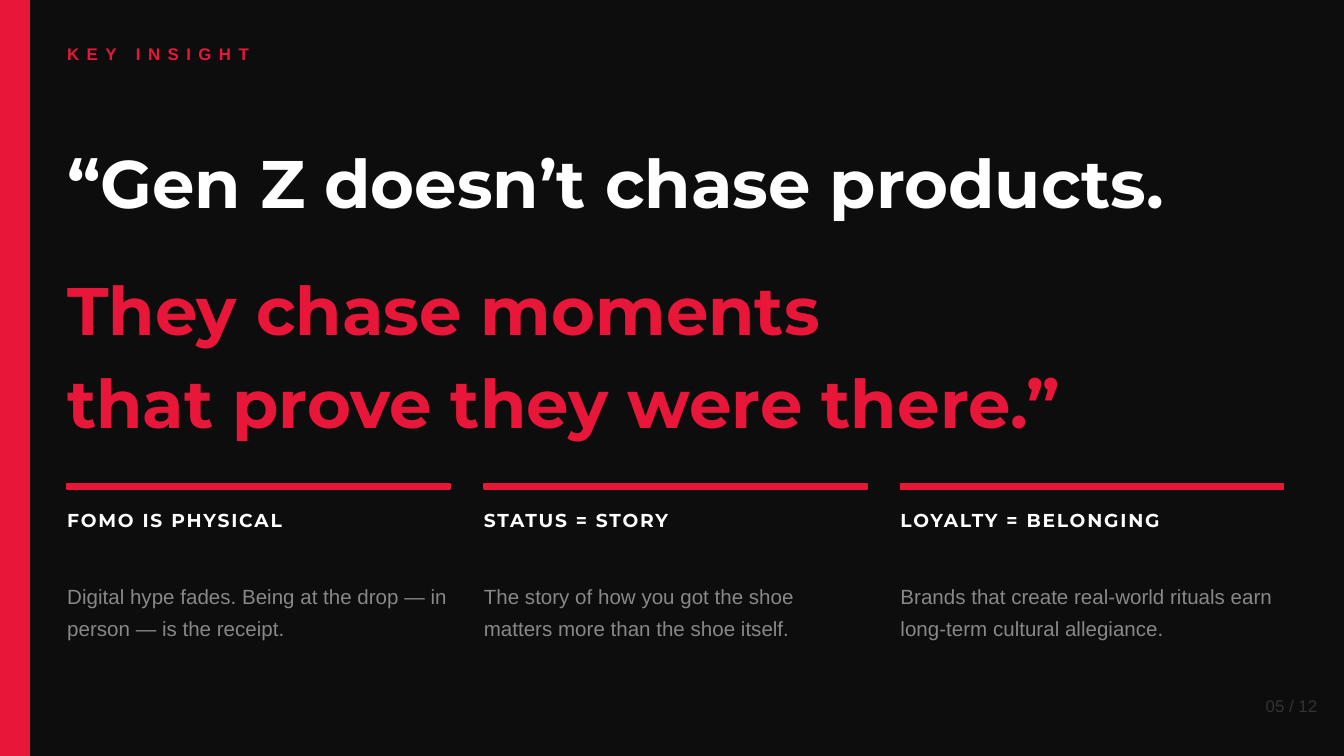
from pptx import Presentation
from pptx.dml.color import RGBColor
from pptx.enum import shapes, text
from pptx.util import Pt

COLORS = {"background": "0D0D0D", "accent": "E8173A", "white": "FFFFFF",
          "body": "888888", "page": "333333"}


def add_bar(slide, left, top, width, height):
    shape = slide.shapes.add_shape(shapes.MSO_SHAPE.RECTANGLE,
                                   Pt(left), Pt(top), Pt(width), Pt(height))
    shape.shadow.inherit = False
    shape.fill.solid()
    shape.fill.fore_color.rgb = RGBColor.from_string(COLORS["accent"])
    shape.line.color.rgb = RGBColor.from_string(COLORS["accent"])
    shape.line.width = Pt(1)


def add_text(slide, left, top, width, height, content, size, font, color,
             bold=False, tracking=0, line_spacing=None, align=None):
    box = slide.shapes.add_textbox(Pt(left), Pt(top), Pt(width), Pt(height))
    frame = box.text_frame
    frame.word_wrap = True
    frame.vertical_anchor = text.MSO_ANCHOR.MIDDLE
    frame.margin_left = frame.margin_top = frame.margin_right = frame.margin_bottom = 0
    frame.text = content
    for paragraph in frame.paragraphs:
        paragraph.alignment = align
        paragraph.line_spacing = line_spacing
        for run in paragraph.runs:
            run.font.size = Pt(size)
            run.font.name = font
            run.font.bold = bold
            run.font.color.rgb = RGBColor.from_string(COLORS[color])
            if tracking:
                run.font._element.set("spc", str(tracking * 100))


presentation = Presentation()
presentation.slide_width = Pt(720)
presentation.slide_height = Pt(405)
slide = presentation.slides.add_slide(presentation.slide_layouts[6])
slide.background.fill.solid()
slide.background.fill.fore_color.rgb = RGBColor.from_string(COLORS["background"])

# Side bar and section label
margin = 36
add_bar(slide, 0, 0, 15.84, 405)
add_text(slide, margin, 18, 648, 21.6, "KEY INSIGHT", 9, "Arial", "accent",
         bold=True, tracking=4)

# Quote
add_text(slide, margin, 54, 662.4, 86.4, "“Gen Z doesn’t chase products.",
         36, "Montserrat", "white", bold=True)
add_text(slide, margin, 133.2, 662.4, 108,
         "They chase moments\nthat prove they were there.”",
         36, "Montserrat", "accent", bold=True, line_spacing=1.15)

# Three supporting columns
columns = [
    ("FOMO IS PHYSICAL",
     "Digital hype fades. Being at the drop — in person — is the receipt."),
    ("STATUS = STORY",
     "The story of how you got the shoe matters more than the shoe itself."),
    ("LOYALTY = BELONGING",
     "Brands that create real-world rituals earn long-term cultural allegiance."),
]
column_width, column_step = 205.2, 223.2
for index, (heading, body) in enumerate(columns):
    left = margin + index * column_step
    add_bar(slide, left, 259.2, column_width, 2.88)
    add_text(slide, left, 267.84, column_width, 21.6, heading,
             10, "Montserrat", "white", bold=True, tracking=1)
    add_text(slide, left, 293.76, column_width, 64.8, body,
             11, "Arial", "body", line_spacing=1.3)

# Page number
add_text(slide, 633.6, 367.2, 72, 21.6, "05 / 12", 9, "Arial", "page",
         align=text.PP_ALIGN.RIGHT)

presentation.save("out.pptx")
